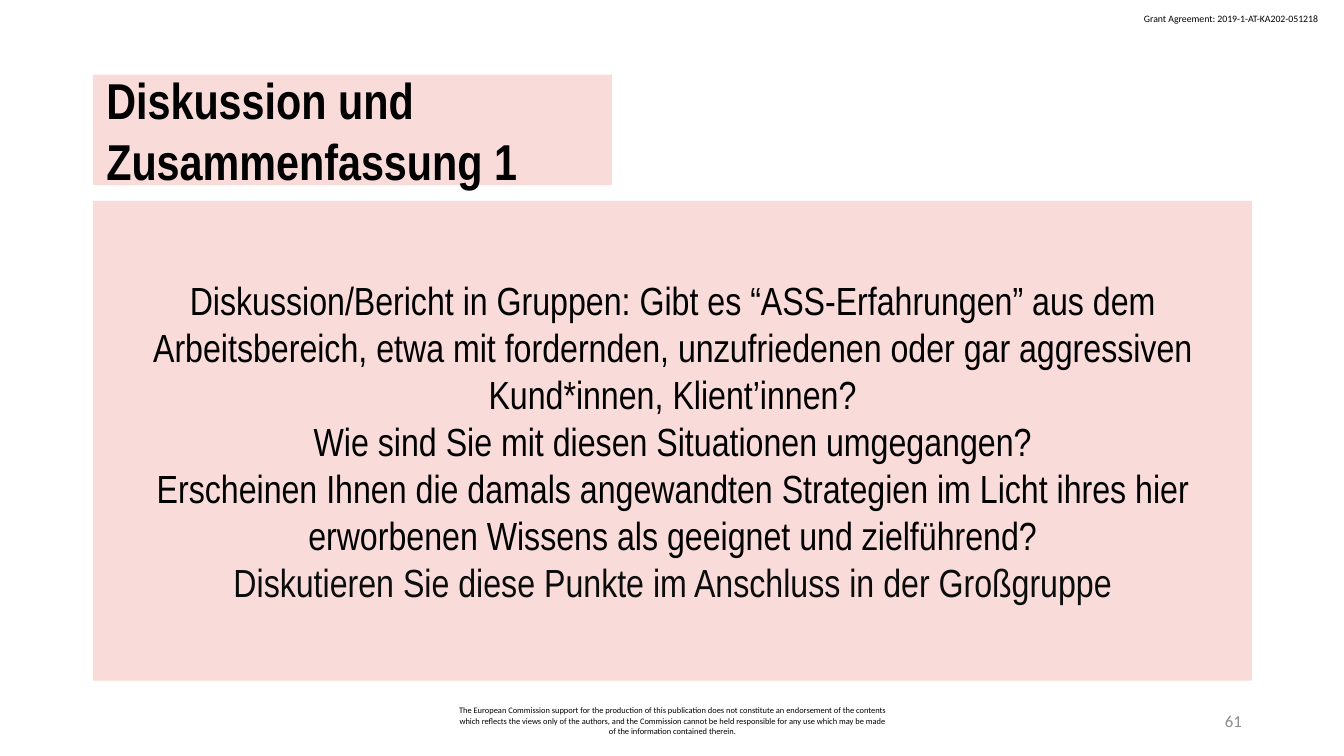
from pptx import Presentation
from pptx.dml.color import RGBColor
from pptx.enum.shapes import MSO_SHAPE
from pptx.enum.text import MSO_ANCHOR as ANCHOR, PP_ALIGN as ALIGN
from pptx.util import Cm, Pt

COLORS = {"panel": "F9DBD9", "text": "000000", "closing": "0B0C0C", "number": "8C8C8C"}
HEADING_FONT, SMALL_FONT = "Arial Narrow", "Calibri"

GRANT = "Grant Agreement: 2019-1-AT-KA202-051218"
TITLE = "Diskussion und Zusammenfassung 1"
QUESTIONS = [
    "Diskussion/Bericht in Gruppen: Gibt es “ASS-Erfahrungen” aus dem Arbeitsbereich, "
    "etwa mit fordernden, unzufriedenen oder gar aggressiven Kund*innen, Klient’innen?",
    "Wie sind Sie mit diesen Situationen umgegangen?",
    "Erscheinen Ihnen die damals angewandten Strategien im Licht ihres hier "
    "erworbenen Wissens als geeignet und zielführend?",
    "Diskutieren Sie diese Punkte im Anschluss in der Großgruppe",
]
DISCLAIMER = (
    "The European Commission support for the production of this publication does not "
    "constitute an endorsement of the contents which reflects the views only of the "
    "authors, and the Commission cannot be held responsible for any use which may be "
    "made of the information contained therein."
)


def rgb(name):
    return RGBColor.from_string(COLORS[name])


def write(tf, lines, font, size, align=ALIGN.LEFT, color="text", bold=False):
    for i, line in enumerate(lines):
        p = tf.paragraphs[0] if i == 0 else tf.add_paragraph()
        p.text = line
        p.alignment = align
        p.font.name = font
        p.font.size = Pt(size)
        p.font.bold = bold
        p.font.color.rgb = rgb(color)


def add_panel(slide, box, lines, size, align, bold=False):
    sp = slide.shapes.add_shape(MSO_SHAPE.RECTANGLE, *map(Cm, box))
    sp.shadow.inherit = False
    sp.fill.solid()
    sp.fill.fore_color.rgb = rgb("panel")
    sp.line.fill.background()
    tf = sp.text_frame
    tf.word_wrap = True
    tf.vertical_anchor = ANCHOR.MIDDLE
    tf.margin_left = tf.margin_right = Cm(0.34)
    tf.margin_top = tf.margin_bottom = Cm(0.17)
    write(tf, lines, HEADING_FONT, size, align, bold=bold)
    return tf


def add_note(slide, box, text, size, align, color="text", anchor=ANCHOR.MIDDLE, wrap=True):
    tf = slide.shapes.add_textbox(*map(Cm, box)).text_frame
    tf.word_wrap = wrap
    tf.vertical_anchor = anchor
    write(tf, [text], SMALL_FONT, size, align, color)


def add_footer(slide, left, top, width, height):
    note_width, number_width = 11.43, 7.62
    right = left + width
    note_left = left + (width - note_width) / 2
    add_note(slide, (note_left, top, note_width, height), DISCLAIMER, 6, ALIGN.CENTER)
    add_note(slide, (right - number_width, top, number_width, height),
             "61", 12, ALIGN.RIGHT, "number")


def add_discussion(slide, left, top, width, height):
    title_height, gap = 2.79, 0.39
    add_panel(slide, (left, top, 13.08, title_height), [TITLE], 36, ALIGN.LEFT, bold=True)
    offset = title_height + gap
    tf = add_panel(slide, (left, top + offset, width, height - offset),
                   QUESTIONS, 28, ALIGN.CENTER)
    tf.paragraphs[-1].font.color.rgb = rgb("closing")


def main():
    prs = Presentation()
    prs.slide_width, prs.slide_height = Cm(33.87), Cm(19.05)
    slide = prs.slides.add_slide(prs.slide_layouts[6])
    left, width = 2.34, 29.21
    add_note(slide, (28.58, 0.2, 5, 0.56), GRANT, 7, ALIGN.LEFT,
             anchor=ANCHOR.TOP, wrap=False)
    add_footer(slide, left, 17.65, width, 1.02)
    add_discussion(slide, left, 1.88, width, 15.27)
    prs.save("out.pptx")


if __name__ == "__main__":
    main()
